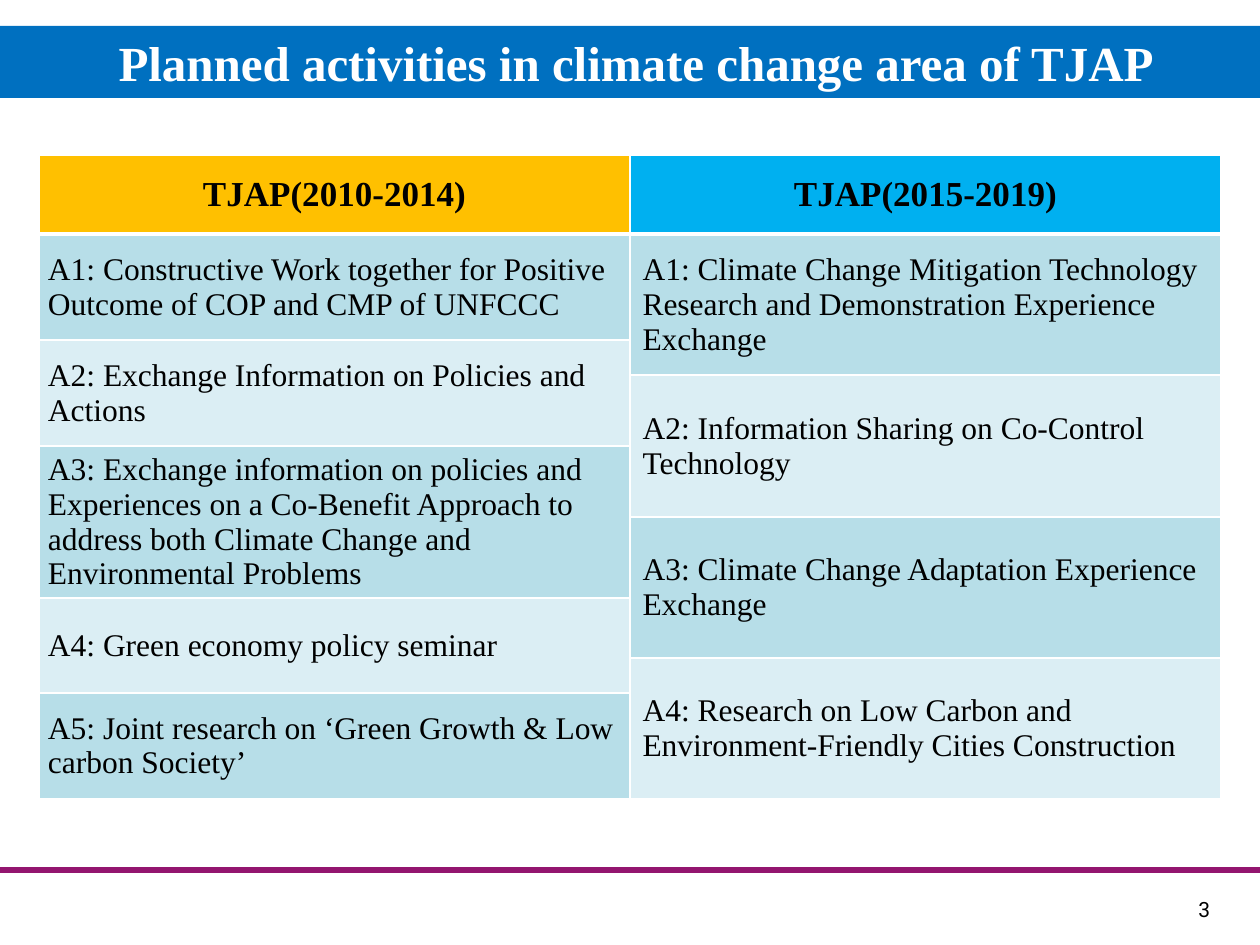
from lxml.etree import SubElement
from pptx import Presentation
from pptx.dml.color import RGBColor
from pptx.enum.shapes import MSO_CONNECTOR, MSO_SHAPE
from pptx.enum.text import MSO_ANCHOR, PP_ALIGN
from pptx.oxml.ns import qn
from pptx.util import Emu, Pt

PX = 914400 / 126
SERIF = "Times New Roman"
BANDS = ["B7DEE8", "DBEEF4"]
ROW_HEIGHTS = [79, 106, 35, 71, 71, 81, 60, 35, 106]
COLUMN_WIDTH = 591

# Each activity: first row, last row, text
FIRST_PLAN = [
    (1, 1, "A1: Constructive Work together for Positive Outcome of COP and CMP of UNFCCC"),
    (2, 3, "A2: Exchange Information on Policies and Actions"),
    (4, 5, "A3: Exchange information on policies and Experiences on a Co-Benefit "
           "Approach to address both Climate Change and Environmental Problems"),
    (6, 7, "A4: Green economy policy seminar"),
    (8, 8, "A5: Joint research on ‘Green Growth & Low carbon Society’"),
]
SECOND_PLAN = [
    (1, 2, "A1: Climate Change Mitigation Technology Research and Demonstration "
           "Experience\nExchange"),
    (3, 4, "A2: Information Sharing on Co-Control Technology"),
    (5, 6, "A3: Climate Change Adaptation Experience Exchange"),
    (7, 8, "A4: Research on Low Carbon and Environment-Friendly Cities Construction"),
]
PLANS = [
    ("TJAP(2010-2014)", "FFC000", FIRST_PLAN),
    ("TJAP(2015-2019)", "00B0F0", SECOND_PLAN),
]


def px(*lengths):
    return [Emu(round(length * PX)) for length in lengths]


def write(frame, text, size, color="000000", font=SERIF, bold=False, align=PP_ALIGN.LEFT):
    frame.text = text
    for paragraph in frame.paragraphs:
        paragraph.alignment = align
        paragraph.font.name = font
        paragraph.font.size = Pt(size)
        paragraph.font.bold = bold
        paragraph.font.color.rgb = RGBColor.from_string(color)


prs = Presentation()
prs.slide_width, prs.slide_height = px(1260, 945)
slide = prs.slides.add_slide(prs.slide_layouts[6])
shapes = slide.shapes

# Footer rule and page number
footer_rule = shapes.add_connector(MSO_CONNECTOR.STRAIGHT, *px(0, 870, 1260, 870))
footer_rule.line.color.rgb = RGBColor.from_string("93166F")
footer_rule.line.width = Pt(3)
SubElement(footer_rule._element.spPr, qn("a:effectLst"))

page_number = shapes.add_textbox(*px(1186, 890, 59, 38))
page_number.text_frame.word_wrap = True
write(page_number.text_frame, "3", 12, font="Roboto")

# Title band
title = shapes.add_shape(MSO_SHAPE.RECTANGLE, *px(0, 26, 1260, 72))
title.shadow.inherit = False
title.fill.solid()
title.fill.fore_color.rgb = RGBColor.from_string("0070C0")
title.line.fill.background()
write(title.text_frame, " Planned activities in climate change area of TJAP", 28,
      "FFFFFF", bold=True, align=PP_ALIGN.CENTER)

# Activities table
table = shapes.add_table(len(ROW_HEIGHTS), len(PLANS),
                         *px(39, 155, COLUMN_WIDTH * len(PLANS), sum(ROW_HEIGHTS))).table
table.first_row = table.horz_banding = False
for column in table.columns:
    column.width = px(COLUMN_WIDTH)[0]
for row, height in zip(table.rows, px(*ROW_HEIGHTS)):
    row.height = height

for r in range(len(ROW_HEIGHTS)):
    for c in range(len(PLANS)):
        cell_properties = table.cell(r, c)._tc.get_or_add_tcPr()
        for side in "LRTB":
            under_header = (r, side) in [(0, "B"), (1, "T")]
            border = SubElement(cell_properties, qn(f"a:ln{side}"),
                                w=str(Pt(3 if under_header else 1)))
            border_fill = SubElement(border, qn("a:solidFill"))
            SubElement(border_fill, qn("a:srgbClr"), val="FFFFFF")

for c, (period, header_color, activities) in enumerate(PLANS):
    header = table.cell(0, c)
    header.vertical_anchor = MSO_ANCHOR.MIDDLE
    header.fill.solid()
    header.fill.fore_color.rgb = RGBColor.from_string(header_color)
    write(header.text_frame, period, 20, bold=True, align=PP_ALIGN.CENTER)

    for i, (first, last, activity) in enumerate(activities):
        cell = table.cell(first, c)
        if last > first:
            cell.merge(table.cell(last, c))
        cell.vertical_anchor = MSO_ANCHOR.MIDDLE
        if c == 0:
            cell.margin_left, cell.margin_right = px(9, 9)
            cell.margin_top = cell.margin_bottom = 0
        for r in range(first, last + 1):
            fill = table.cell(r, c).fill
            fill.solid()
            fill.fore_color.rgb = RGBColor.from_string(BANDS[i % 2])
        write(cell.text_frame, activity, 18)

prs.save("out.pptx")
